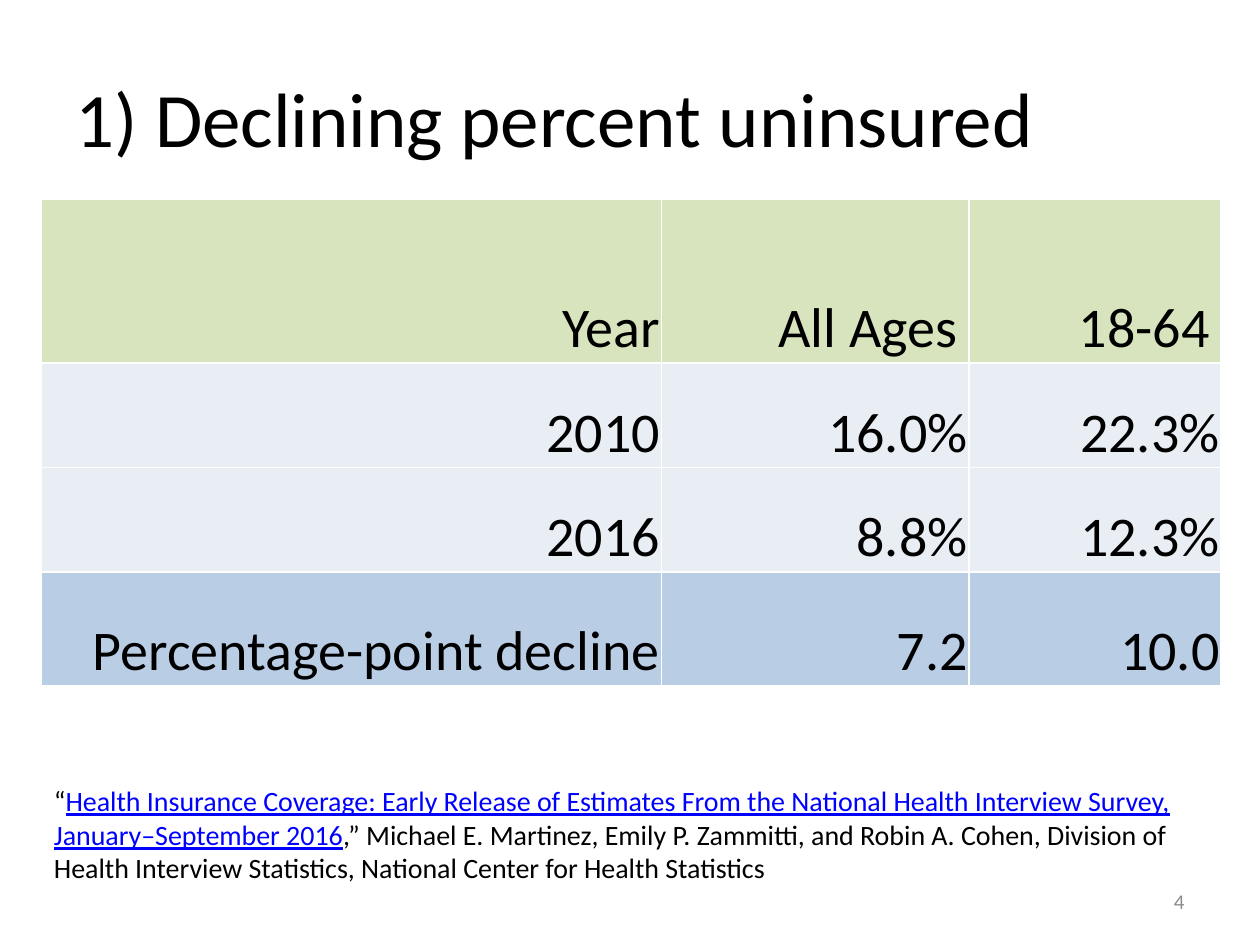
from lxml import etree
from pptx import Presentation
from pptx.dml.color import RGBColor
from pptx.enum.text import MSO_ANCHOR, PP_ALIGN
from pptx.oxml.ns import qn
from pptx.util import Inches, Pt

BLACK = RGBColor(0x00, 0x00, 0x00)
GRAY = RGBColor(0x8C, 0x8C, 0x8C)
LINK_BLUE = RGBColor(0x00, 0x00, 0xFF)
WHITE = RGBColor(0xFF, 0xFF, 0xFF)
GREEN = RGBColor(0xD7, 0xE4, 0xBD)
PALE_BLUE = RGBColor(0xE9, 0xED, 0xF4)
BLUE = RGBColor(0xB9, 0xCD, 0xE5)

LEFT, RIGHT = PP_ALIGN.LEFT, PP_ALIGN.RIGHT
TOP, MIDDLE, BOTTOM = MSO_ANCHOR.TOP, MSO_ANCHOR.MIDDLE, MSO_ANCHOR.BOTTOM

COLUMN_WIDTHS = [4.92, 2.44, 2]
ROWS = [
    (1.3, GREEN, ["Year", "All Ages", "18-64"]),
    (0.83, PALE_BLUE, ["2010", "16.0%", "22.3%"]),
    (0.83, PALE_BLUE, ["2016", "8.8%", "12.3%"]),
    (0.9, BLUE, ["Percentage-point decline", "7.2", "10.0"]),
]
CITATION = [
    ("“", BLACK, False),
    ("Health Insurance Coverage: Early Release of Estimates From the National "
     "Health Interview Survey, January–September 2016", LINK_BLUE, True),
    (",” Michael E. Martinez, Emily P. Zammitti, and Robin A. Cohen, Division of "
     "Health Interview Statistics, National Center for Health Statistics", BLACK, False),
]


def add_span(para, text, size, color=BLACK, underline=False):
    span = para.add_run()
    span.text = text
    span.font.name = "Calibri"
    span.font.size = Pt(size)
    span.font.color.rgb = color
    span.font.underline = underline


def add_text(page, box, spans, size, anchor=TOP, align=LEFT):
    frame = page.shapes.add_textbox(*map(Inches, box)).text_frame
    frame.word_wrap = True
    frame.vertical_anchor = anchor
    para = frame.paragraphs[0]
    para.alignment = align
    for text, color, underline in spans:
        add_span(para, text, size, color, underline)


def add_borders(cell):
    properties = cell._tc.get_or_add_tcPr()
    for position, side in enumerate(("a:lnL", "a:lnR", "a:lnT", "a:lnB")):
        line = etree.Element(qn(side), w=str(Pt(1)))
        fill = etree.SubElement(line, qn("a:solidFill"))
        etree.SubElement(fill, qn("a:srgbClr"), val=str(WHITE))
        properties.insert(position, line)


def fill_cell(cell, text, color, right_margin):
    cell.fill.solid()
    cell.fill.fore_color.rgb = color
    cell.vertical_anchor = BOTTOM
    cell.margin_left = cell.margin_top = Inches(0.01)
    cell.margin_right = Inches(right_margin)
    cell.margin_bottom = 0
    para = cell.text_frame.paragraphs[0]
    para.alignment = RIGHT
    add_span(para, text, 32)
    add_borders(cell)


def add_rates_table(page, box):
    table = page.shapes.add_table(len(ROWS), len(COLUMN_WIDTHS), *map(Inches, box)).table
    for column, width in zip(table.columns, COLUMN_WIDTHS):
        column.width = Inches(width)
    for row_index, (height, color, texts) in enumerate(ROWS):
        table.rows[row_index].height = Inches(height)
        for column_index, text in enumerate(texts):
            is_age_heading = row_index == 0 and column_index > 0
            right_margin = 0.09 if is_age_heading else 0.01
            fill_cell(table.cell(row_index, column_index), text, color, right_margin)


def main():
    deck = Presentation()
    deck.slide_width, deck.slide_height = Inches(10), Inches(7.5)
    page = deck.slides.add_slide(deck.slide_layouts[6])
    add_text(page, (0.5, 0.3, 9, 1.25),
             [("1) Declining percent uninsured", BLACK, False)], 44, MIDDLE)
    add_rates_table(page, (0.33, 1.58, 9.35, 3.86))
    add_text(page, (0.33, 6.17, 9.33, 0.91), CITATION, 16)
    add_text(page, (7.17, 6.95, 2.33, 0.4), [("4", GRAY, False)], 12, MIDDLE, RIGHT)
    deck.save("out.pptx")


if __name__ == "__main__":
    main()
